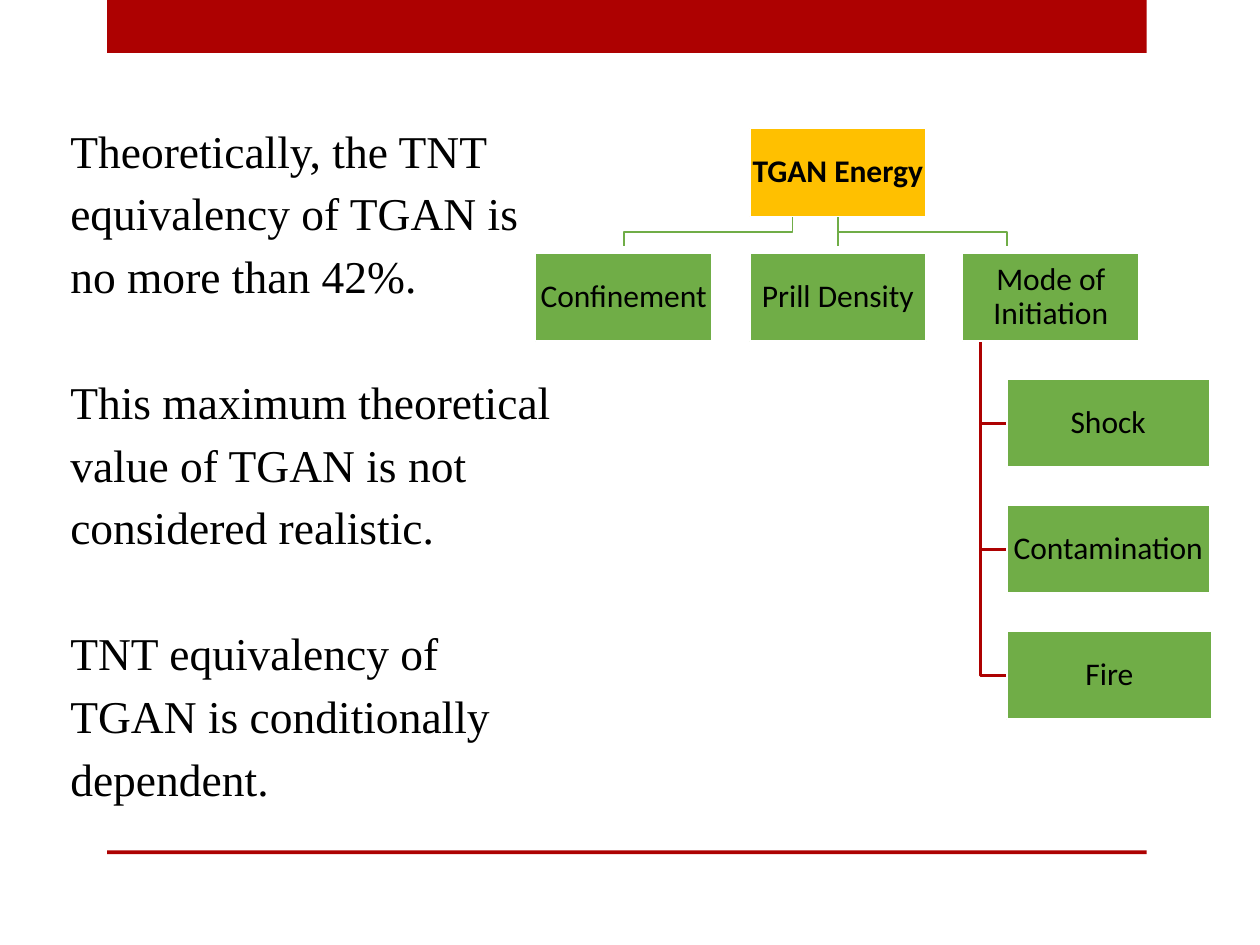
from pptx import Presentation
from pptx.dml.color import RGBColor
from pptx.enum import shapes, text
from pptx.util import Inches, Pt

RED = RGBColor(0xAD, 0x01, 0x01)
GREEN = RGBColor(0x70, 0xAD, 0x47)
GOLD = RGBColor(0xFF, 0xC0, 0x00)
WHITE = RGBColor(0xFF, 0xFF, 0xFF)
BLACK = RGBColor(0x00, 0x00, 0x00)

NODE_WIDTH, NODE_HEIGHT = 1.4, 0.7
ROOT_LEFT, ROOT_TOP = 5.95, 1.02
ROW_STEP = 1.0
FACTOR_TOP = 2.01
FACTORS = [("Confinement", 4.25), ("Prill Density", 5.95), ("Mode of Initiation", 7.64)]
TRUNK_X, MODE_LEFT = 7.78, 7.99
MODES = [("Shock", 1.61), ("Contamination", 1.61), ("Fire", 1.63)]
STATEMENTS = [
    "Theoretically, the TNT equivalency of TGAN is no more than 42%.",
    "This maximum theoretical value of TGAN is not considered realistic.",
    "TNT equivalency of TGAN is conditionally dependent.",
]


def style_font(paragraph, name, size, bold=False):
    paragraph.font.name = name
    paragraph.font.size = Pt(size)
    paragraph.font.bold = bold
    paragraph.font.color.rgb = BLACK


def add_block(slide, left, top, width, height, color):
    block = slide.shapes.add_shape(
        shapes.MSO_SHAPE.RECTANGLE, Inches(left), Inches(top), Inches(width), Inches(height))
    block.shadow.inherit = False
    block.fill.solid()
    block.fill.fore_color.rgb = color
    block.line.fill.background()
    return block


def add_node(slide, label, left, top, width=NODE_WIDTH, color=GREEN, bold=False):
    node = add_block(slide, left, top, width, NODE_HEIGHT, color)
    node.line.color.rgb = WHITE
    node.line.width = Pt(1)
    frame = node.text_frame
    frame.word_wrap = True
    frame.vertical_anchor = text.MSO_ANCHOR.MIDDLE
    frame.margin_left = frame.margin_right = Inches(0.01)
    frame.margin_top = frame.margin_bottom = Inches(0.01)
    paragraph = frame.paragraphs[0]
    paragraph.text = label
    paragraph.alignment = text.PP_ALIGN.CENTER
    paragraph.line_spacing = 0.9
    style_font(paragraph, "Calibri", 18, bold)


def add_branch(slide, points, color, weight):
    start, *rest = [(Inches(x), Inches(y)) for x, y in points]
    builder = slide.shapes.build_freeform(*start)
    builder.add_line_segments(rest, close=False)
    branch = builder.convert_to_shape()
    branch.shadow.inherit = False
    branch.fill.background()
    branch.line.color.rgb = color
    branch.line.width = Pt(weight)


def add_statements(slide):
    box = slide.shapes.add_textbox(Inches(0.46), Inches(0.86), Inches(4.13), Inches(5.6))
    frame = box.text_frame
    frame.word_wrap = True
    for index, statement in enumerate(STATEMENTS):
        paragraph = frame.add_paragraph() if index else frame.paragraphs[0]
        paragraph.text = statement
        paragraph.line_spacing = 1.15
        if index:
            paragraph.space_before = Pt(36)
        style_font(paragraph, "Times New Roman", 26)


def add_energy_tree(slide):
    mode_tops = [FACTOR_TOP + ROW_STEP * (row + 1) for row in range(len(MODES))]
    for top in reversed(mode_tops):
        middle = top + NODE_HEIGHT / 2
        add_branch(slide, [(TRUNK_X, FACTOR_TOP + NODE_HEIGHT), (TRUNK_X, middle),
                           (MODE_LEFT, middle)], RED, 1.75)

    root_bottom, bend, end = ROOT_TOP + NODE_HEIGHT, 1.84, 1.95
    center = ROOT_LEFT + NODE_WIDTH / 2
    for start, target in [(center, 7.99), (6.29, 4.95)]:
        add_branch(slide, [(start, root_bottom), (start, bend), (target, bend),
                           (target, end)], GREEN, 1)
    add_branch(slide, [(center, root_bottom), (center, end)], GREEN, 1)

    add_node(slide, "TGAN Energy", ROOT_LEFT, ROOT_TOP, color=GOLD, bold=True)
    for label, left in FACTORS:
        add_node(slide, label, left, FACTOR_TOP)
    for (label, width), top in zip(MODES, mode_tops):
        add_node(slide, label, MODE_LEFT, top, width)


def main():
    deck = Presentation()
    deck.slide_width, deck.slide_height = Inches(10), Inches(7.5)
    slide = deck.slides.add_slide(deck.slide_layouts[6])
    add_block(slide, 0.85, 0, 8.25, 0.42, RED)
    add_block(slide, 0.85, 6.75, 8.25, 0.03, RED)
    add_energy_tree(slide)
    add_statements(slide)
    deck.save("out.pptx")


if __name__ == "__main__":
    main()
